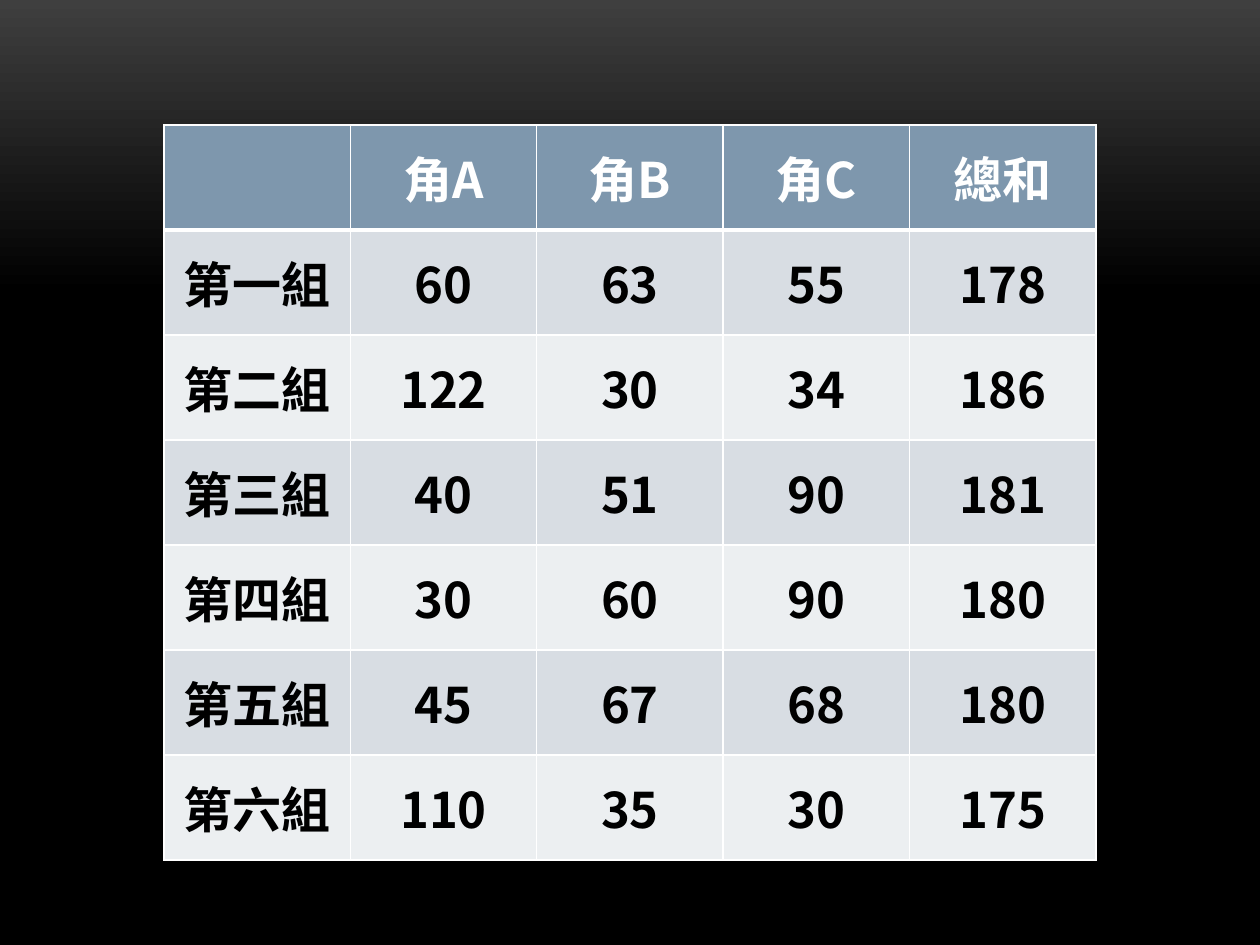
from copy import deepcopy

from lxml import etree
from pptx import Presentation
from pptx import util as u
from pptx.dml.color import RGBColor
from pptx.enum import text
from pptx.oxml import ns

PX = 914400 / 126
FONT = "Noto Sans CJK SC"
COLORS = {
    "glow": "3F3F3F",
    "black": "000000",
    "white": "FFFFFF",
    "header": "7E97AD",
    "odd": "D8DDE3",
    "even": "ECEFF1",
}
ANGLES = [
    ["", "角A", "角B", "角C", "總和"],
    ["第一組", 60, 63, 55, 178],
    ["第二組", 122, 30, 34, 186],
    ["第三組", 40, 51, 90, 181],
    ["第四組", 30, 60, 90, 180],
    ["第五組", 45, 67, 68, 180],
    ["第六組", 110, 35, 30, 175],
]


def px(length):
    return u.Emu(round(length * PX))


def color(name):
    return RGBColor.from_string(COLORS[name])


def paint_background(page):
    """Fade from grey at the top to black a third of the way down."""
    fill = page.background.fill
    fill.gradient()
    fill.gradient_angle = 270
    for stop, name, position in zip(fill.gradient_stops, ("glow", "black"), (0, 0.31)):
        stop.color.rgb = color(name)
        stop.position = position
    # Hold black to the bottom edge
    fade_end = list(page.element.iter(ns.qn("a:gs")))[-1]
    bottom = deepcopy(fade_end)
    bottom.set("pos", "100000")
    fade_end.addnext(bottom)


def add_borders(cell, bottom_width):
    properties = cell._tc.get_or_add_tcPr()
    widths = {"lnL": 1, "lnR": 1, "lnT": 1, "lnB": bottom_width}
    for index, (side, width) in enumerate(widths.items()):
        line = etree.Element(ns.qn(f"a:{side}"), w=str(u.Pt(width)))
        solid = etree.SubElement(line, ns.qn("a:solidFill"))
        etree.SubElement(solid, ns.qn("a:srgbClr"), val=COLORS["white"])
        properties.insert(index, line)


def write_cell(cell, value, fill, ink, bottom_width):
    cell.fill.solid()
    cell.fill.fore_color.rgb = color(fill)
    cell.vertical_anchor = text.MSO_ANCHOR.MIDDLE
    add_borders(cell, bottom_width)
    if value == "":
        return
    para = cell.text_frame.paragraphs[0]
    para.alignment = text.PP_ALIGN.CENTER
    span = para.add_run()
    span.text = str(value)
    span.font.size = u.Pt(28)
    span.font.bold = True
    span.font.name = FONT
    span.font.color.rgb = color(ink)
    # East Asian typeface
    etree.SubElement(span.font._element, ns.qn("a:ea"), typeface=FONT)


def add_angle_table(page, left, top, width, height):
    frame = page.shapes.add_table(
        len(ANGLES), len(ANGLES[0]), px(left), px(top), px(width), px(height)
    )
    for row, values in enumerate(ANGLES):
        if row == 0:
            style = ("header", "white", 3)
        else:
            style = ("odd" if row % 2 else "even", "black", 1)
        for column, value in enumerate(values):
            write_cell(frame.table.cell(row, column), value, *style)


def main():
    deck = Presentation()
    deck.slide_width, deck.slide_height = px(1260), px(945)
    page = deck.slides.add_slide(deck.slide_layouts[6])
    paint_background(page)
    add_angle_table(page, 164, 125, 932, 735)
    deck.save("out.pptx")


if __name__ == "__main__":
    main()
